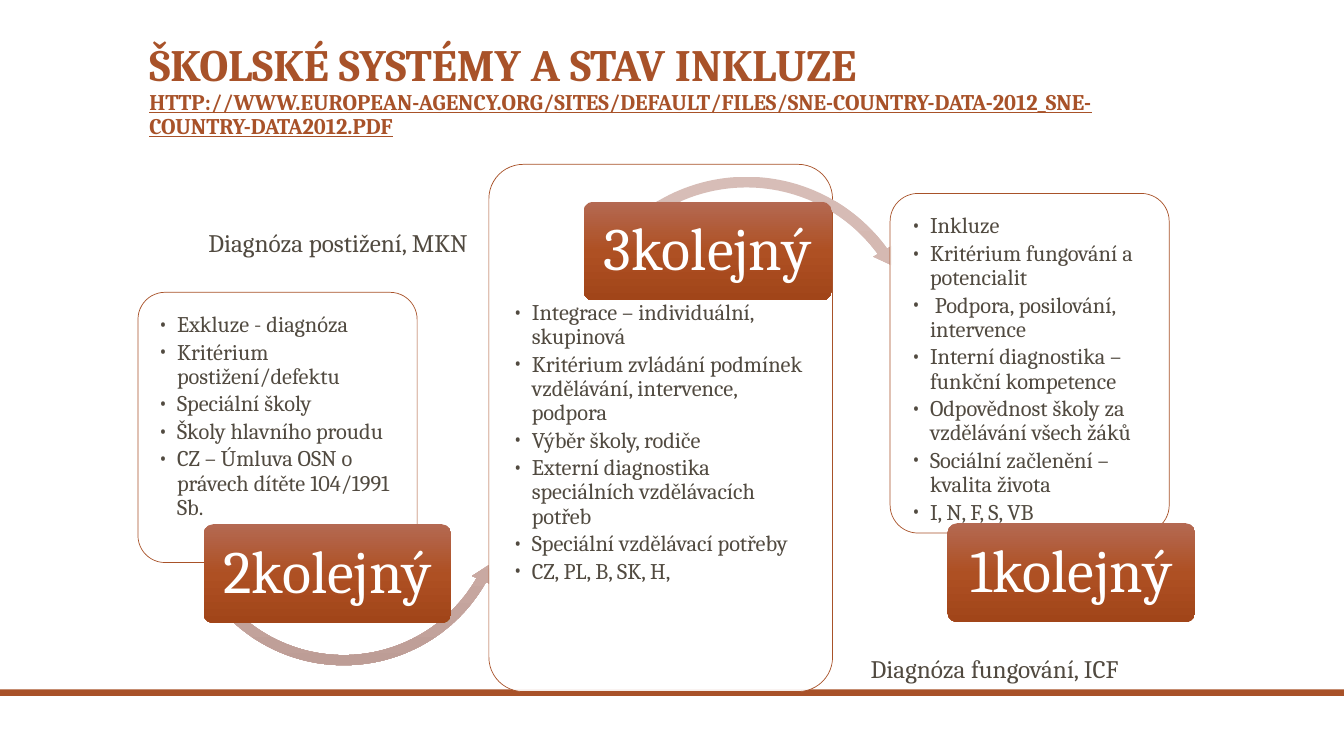
from lxml.etree import SubElement
from pptx import Presentation
from pptx.dml.color import RGBColor
from pptx.enum.shapes import MSO_SHAPE
from pptx.enum.text import MSO_ANCHOR, MSO_AUTO_SIZE, PP_ALIGN
from pptx.oxml.ns import qn
from pptx.util import Pt

# Content
TITLE = "ŠKOLSKÉ SYSTÉMY A STAV INKLUZE"
LINK = ("HTTP://WWW.EUROPEAN-AGENCY.ORG/SITES/DEFAULT/FILES/"
        "SNE-COUNTRY-DATA-2012_SNE-COUNTRY-DATA2012.PDF")
# Boxes are left, top, width, height in points; arrow angles are degrees
STAGES = [
    dict(name="2kolejný", panel=(98.6, 208.8, 199.4, 193), body=(103, 213.8, 190, 142.6),
         badge=(145.4, 374.4),
         arrow=(MSO_SHAPE.LEFT_CIRCULAR_ARROW, (125.3, 238.3, 240.5, 240.5),
                (0.03, 6, 29.58, 144.39, 0.03)),
         points=["Exkluze - diagnóza", "Kritérium postižení/defektu",
                 "Speciální školy", "Školy hlavního proudu",
                 "CZ – Úmluva OSN o právech dítěte 104/1991 Sb."]),
    dict(name="3kolejný", panel=(349.2, 117.4, 245.5, 376.6), body=(356.4, 205.2, 231.1, 281.5),
         badge=(416.9, 144),
         arrow=(MSO_SHAPE.CIRCULAR_ARROW, (405.4, 122.4, 255.6, 255.6),
                (0.03, 5.63, 323.95, 208.75, 0.03)),
         points=["Integrace – individuální, skupinová",
                 "Kritérium zvládání podmínek vzdělávání, intervence, podpora",
                 "Výběr školy, rodiče",
                 "Externí diagnostika speciálních vzdělávacích potřeb",
                 "Speciální vzdělávací potřeby", "CZ, PL, B, SK, H,"]),
    dict(name="1kolejný", panel=(635.8, 138.2, 199.4, 242.6), body=(640.8, 143.3, 187.9, 179.3),
         badge=(676.8, 373.7), arrow=None,
         points=["Inkluze", "Kritérium fungování a potencialit",
                 " Podpora, posilování, intervence",
                 "Interní diagnostika – funkční kompetence",
                 "Odpovědnost školy za vzdělávání všech žáků",
                 "Sociální začlenění – kvalita života", "I, N, F, S, VB"]),
]
NOTES = [("Diagnóza postižení, MKN", (141.8, 159.1, 207.4, 28.8)),
         ("Diagnóza fungování, ICF", (614.9, 463, 206.6, 28.8))]
THEME = dict(font="Cambria", rust="A85229", ink="514A40", white="FFFFFF",
             badge=("B46952", "AE5023", "A14519"),
             arrow=("D7BDB7", "D2B2AB", "BD9D96"),
             title=32, link=16, body=16, label=43, note=18)
BADGE = (177.1, 70.6)
INDENT = 13.5

deck = Presentation()
deck.slide_width, deck.slide_height = Pt(960), Pt(540)
slide = deck.slides.add_slide(deck.slide_layouts[5])


def place(box):
    return [Pt(v) for v in box]


def style(run, size, color, bold=False):
    font = run.font
    font.name, font.size, font.bold = THEME["font"], Pt(THEME[size]), bold
    font.color.rgb = RGBColor.from_string(THEME[color])


def shape(kind, box, fill, line=None):
    item = slide.shapes.add_shape(kind, *place(box))
    item.shadow.inherit = False
    if isinstance(fill, tuple):
        blend(item, fill)
    else:
        item.fill.solid()
        item.fill.fore_color.rgb = RGBColor.from_string(fill)
    if line:
        item.line.color.rgb = RGBColor.from_string(line)
        item.line.width = Pt(0.5)
    else:
        item.line.fill.background()
    return item


def blend(item, colors):
    item.fill.gradient()
    item.fill.gradient_angle = 270
    stops = item.element.spPr.find(".//" + qn("a:gsLst"))
    stops.clear()
    for i, color in enumerate(colors):
        stop = SubElement(stops, qn("a:gs"), pos=str(i * 50000))
        SubElement(stop, qn("a:srgbClr"), val=color)


def margins(frame, side, top):
    frame.margin_left = frame.margin_right = Pt(side)
    frame.margin_top = frame.margin_bottom = Pt(top)


def panel(box):
    item = shape(MSO_SHAPE.ROUNDED_RECTANGLE, box, THEME["white"], THEME["rust"])
    item.adjustments[0] = 0.1
    color = item.element.spPr.find(qn("a:solidFill"))[0]
    SubElement(color, qn("a:alpha"), val="90000")


def bullets(box, points):
    frame = slide.shapes.add_textbox(*place(box)).text_frame
    frame.word_wrap = True
    margins(frame, 10, 10)
    frame.text = "\n".join(points)
    for para in frame.paragraphs:
        para.line_spacing, para.space_after = 0.9, Pt(2.4)
        props = para._p.get_or_add_pPr()
        props.set("marL", str(Pt(INDENT)))
        props.set("indent", str(-Pt(INDENT)))
        SubElement(props, qn("a:buFont"), typeface=THEME["font"])
        SubElement(props, qn("a:buChar"), char="•")
        style(para.runs[0], "body", "ink")


def arrow(kind, box, adjust):
    item = shape(kind, box, THEME["arrow"])
    for i, value in enumerate(adjust):
        # Angles are stored in 60000ths of a degree, ratios in 100000ths
        item.adjustments[i] = value * 0.6 if 0 < i < 4 else value


def badge(spot, name):
    item = shape(MSO_SHAPE.ROUNDED_RECTANGLE, spot + BADGE, THEME["badge"])
    item.adjustments[0] = 0.1
    frame = item.text_frame
    margins(frame, 6.5, 4.3)
    frame.vertical_anchor = MSO_ANCHOR.MIDDLE
    frame.text = name
    para = frame.paragraphs[0]
    para.alignment, para.line_spacing = PP_ALIGN.CENTER, 0.9
    style(para.runs[0], "label", "white")


# Title with source link
head = slide.shapes.title
head.left, head.top, head.width, head.height = place((99.4, 13, 756, 90))
frame = head.text_frame
frame.text = TITLE + "\v" + LINK
frame.word_wrap, frame.auto_size = True, MSO_AUTO_SIZE.NONE
frame.vertical_anchor = MSO_ANCHOR.BOTTOM
para = frame.paragraphs[0]
para.alignment, para.line_spacing = PP_ALIGN.LEFT, 0.9
for run, size in zip(para.runs, ("title", "link")):
    style(run, size, "rust", True)
para.runs[1].font.underline = True

# Bottom rule
shape(MSO_SHAPE.RECTANGLE, (0, 492.5, 960, 4.5), THEME["rust"])

# Three stages, each panel covering the arrow before it
for stage in STAGES:
    panel(stage["panel"])
    bullets(stage["body"], stage["points"])
    if stage["arrow"]:
        arrow(*stage["arrow"])
    badge(stage["badge"], stage["name"])

# Side notes
for text, box in NOTES:
    frame = slide.shapes.add_textbox(*place(box)).text_frame
    frame.word_wrap = False
    frame.text = text
    style(frame.paragraphs[0].runs[0], "note", "ink")

deck.save("out.pptx")
